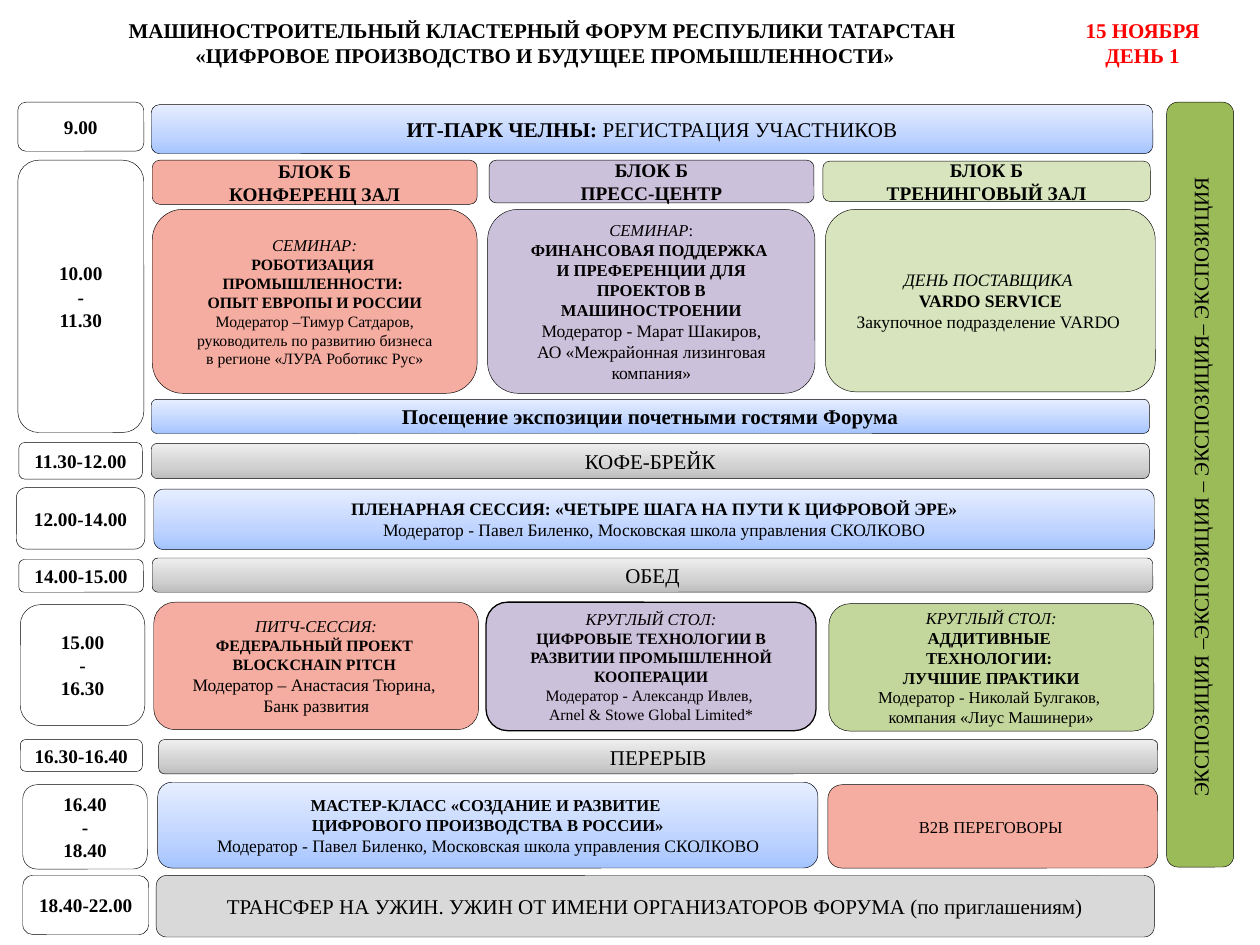
from copy import deepcopy

from pptx import Presentation
from pptx.dml.color import RGBColor
from pptx.enum.shapes import MSO_SHAPE
from pptx.enum.text import MSO_ANCHOR, PP_ALIGN
from pptx.oxml.ns import qn
from pptx.util import Cm, Pt

FONT = "Times New Roman"
BLACK = RGBColor(0x00, 0x00, 0x00)
RED = RGBColor(0xFF, 0x00, 0x00)
WHITE = RGBColor(0xFF, 0xFF, 0xFF)
CORAL = RGBColor(0xF5, 0xAD, 0xA1)
LILAC = RGBColor(0xCC, 0xC1, 0xDA)
LIME = RGBColor(0xD7, 0xE4, 0xBD)
OLIVE = RGBColor(0xC3, 0xD6, 0x9B)
GREEN = RGBColor(0x9B, 0xBB, 0x59)
SILVER = RGBColor(0xD9, 0xD9, 0xD9)
BLUE_FADE = (RGBColor(0xA4, 0xC4, 0xFF), RGBColor(0xBF, 0xD4, 0xFF), RGBColor(0xE6, 0xEE, 0xFF))
GREY_FADE = (RGBColor(0xBD, 0xBD, 0xBD), RGBColor(0xD1, 0xD1, 0xD1), RGBColor(0xEE, 0xEE, 0xEE))
FADE_STOPS = (0, 0.35, 1)


def lines(size, style, *texts):
    return [[(text, size, style)] for text in texts]


HEADINGS = [
    ((0.41, 0.23, 21.16, 1.8), BLACK, lines(
        12, "b", "МАШИНОСТРОИТЕЛЬНЫЙ КЛАСТЕРНЫЙ ФОРУМ РЕСПУБЛИКИ ТАТАРСТАН ",
        "«ЦИФРОВОЕ ПРОИЗВОДСТВО И БУДУЩЕЕ ПРОМЫШЛЕННОСТИ»")),
    ((21.31, 0.23, 3.45, 1.27), RED, lines(12, "b", "15 НОЯБРЯ", "ДЕНЬ 1")),
]

TIMES = [
    ((0.36, 2.06, 2.54, 0.99), ["9.00"]),
    ((0.36, 3.23, 2.54, 5.49), ["10.00", "-", "11.30"]),
    ((0.38, 8.92, 2.49, 0.74), ["11.30-12.00"]),
    ((0.33, 9.83, 2.59, 1.24), ["12.00-14.00"]),
    ((0.38, 11.28, 2.51, 0.66), ["14.00-15.00"]),
    ((0.41, 12.19, 2.51, 2.44), ["15.00", "-", "16.30"]),
    ((0.41, 14.91, 2.46, 0.64), ["16.30-16.40"]),
    ((0.46, 15.82, 2.51, 1.7), ["16.40", "-", "18.40"]),
    ((0.46, 17.65, 2.54, 1.19), ["18.40-22.00"]),
]

EVENTS = [
    ((3.05, 2.11, 20.19, 0.99), BLUE_FADE,
     [[("ИТ-ПАРК ЧЕЛНЫ: ", 12, "b"), ("РЕГИСТРАЦИЯ УЧАСТНИКОВ", 12, "")]]),
    ((3.07, 3.23, 6.55, 0.89), CORAL, lines(11, "b", "БЛОК Б", "КОНФЕРЕНЦ ЗАЛ")),
    ((9.86, 3.23, 6.55, 0.86), LILAC, lines(11, "b", "БЛОК Б", "ПРЕСС-ЦЕНТР")),
    ((16.59, 3.25, 6.6, 0.81), LIME, lines(11, "b", "БЛОК Б", "ТРЕНИНГОВЫЙ ЗАЛ")),
    ((3.07, 4.22, 6.55, 3.71), CORAL,
     lines(9.5, "i", "СЕМИНАР:")
     + lines(9, "b", "РОБОТИЗАЦИЯ ", "ПРОМЫШЛЕННОСТИ: ", "ОПЫТ ЕВРОПЫ И РОССИИ")
     + lines(9, "", "Модератор –Тимур Сатдаров,", "руководитель по развитию бизнеса",
             "в регионе «ЛУРА Роботикс Рус»")),
    ((9.83, 4.22, 6.6, 3.71), LILAC,
     [[("СЕМИНАР", 9.5, "i"), (":", 9.5, "")]]
     + lines(9.5, "b", "ФИНАНСОВАЯ ПОДДЕРЖКА ",
             "И ПРЕФЕРЕНЦИИ ДЛЯ ПРОЕКТОВ В МАШИНОСТРОЕНИИ")
     + lines(10, "", "Модератор - Марат Шакиров,", "АО «Межрайонная лизинговая компания»")),
    ((16.64, 4.22, 6.65, 3.68), LIME,
     lines(10, "i", "ДЕНЬ ПОСТАВЩИКА ")
     + lines(10, "b", "VARDO SERVICE")
     + lines(10, "", "Закупочное подразделение VARDO ")),
    ((3.05, 8.05, 20.12, 0.69), BLUE_FADE,
     lines(12, "b", "Посещение экспозиции почетными гостями Форума")),
    ((3.05, 8.94, 20.12, 0.71), GREY_FADE, lines(12, "", "КОФЕ-БРЕЙК")),
    ((3.1, 9.86, 20.17, 1.22), BLUE_FADE,
     lines(10, "b", "ПЛЕНАРНАЯ СЕССИЯ: «ЧЕТЫРЕ ШАГА НА ПУТИ К ЦИФРОВОЙ ЭРЕ»")
     + lines(10, "", "Модератор - Павел Биленко, Московская школа управления СКОЛКОВО")),
    ((3.07, 11.25, 20.17, 0.69), GREY_FADE, lines(12, "", "ОБЕД")),
    ((3.1, 12.14, 6.55, 2.57), CORAL,
     lines(9.5, "i", "ПИТЧ-СЕССИЯ:")
     + lines(9, "b", "ФЕДЕРАЛЬНЫЙ ПРОЕКТ ", "BLOCKCHAIN PITCH ")
     + lines(10, "", "Модератор – Анастасия Тюрина, ", "Банк развития")),
    ((9.8, 12.14, 6.65, 2.59), LILAC,
     lines(9.5, "i", "КРУГЛЫЙ СТОЛ:")
     + lines(9, "b", "ЦИФРОВЫЕ ТЕХНОЛОГИИ В РАЗВИТИИ ПРОМЫШЛЕННОЙ КООПЕРАЦИИ")
     + lines(9, "", "Модератор - Александр Ивлев, ", "Arnel & Stowe Global Limited*")),
    ((16.71, 12.17, 6.55, 2.57), OLIVE,
     lines(9.5, "i", "КРУГЛЫЙ СТОЛ:")
     + lines(9.5, "b", "АДДИТИВНЫЕ ", "ТЕХНОЛОГИИ: ", "ЛУЧШИЕ ПРАКТИКИ")
     + lines(9.5, "", "Модератор - Николай Булгаков, ", "компания «Лиус Машинери»")),
    ((3.2, 14.91, 20.14, 0.69), GREY_FADE, lines(12, "", "ПЕРЕРЫВ")),
    ((3.18, 15.77, 13.31, 1.73), BLUE_FADE,
     lines(9.5, "b", "МАСТЕР-КЛАСС «СОЗДАНИЕ И РАЗВИТИЕ ", "ЦИФРОВОГО ПРОИЗВОДСТВА В РОССИИ»")
     + lines(10, "", "Модератор - Павел Биленко, Московская школа управления СКОЛКОВО")),
    ((16.69, 15.82, 6.65, 1.68), CORAL, lines(9.5, "", "B2В ПЕРЕГОВОРЫ ")),
    ((3.15, 17.65, 20.12, 1.24), SILVER, lines(
        12, "", "ТРАНСФЕР НА УЖИН. УЖИН ОТ ИМЕНИ ОРГАНИЗАТОРОВ ФОРУМА (по приглашениям)")),
]

EXPOSITION = ((23.52, 2.06, 1.35, 15.42), GREEN, lines(
    12, "", "ЭКСПОЗИЦИЯ –ЭКСПОЗИЦИЯ – ЭКСПОЗИЦИЯ– ЭКСПОЗИЦИЯ "))


def write(box, content, color):
    frame = box.text_frame
    frame.word_wrap = True
    for index, line in enumerate(content):
        para = frame.add_paragraph() if index else frame.paragraphs[0]
        para.alignment = PP_ALIGN.CENTER
        for text, size, style in line:
            span = para.add_run()
            span.text = text
            span.font.name = FONT
            span.font.size = Pt(size)
            span.font.bold = style == "b"
            span.font.italic = style == "i"
            span.font.color.rgb = color


def fade(box, colors):
    box.fill.gradient()
    box.fill.gradient_angle = 90
    stop_list = box._element.spPr.find(qn("a:gradFill")).find(qn("a:gsLst"))
    stop_list.insert(1, deepcopy(stop_list[0]))
    for stop, color, position in zip(box.fill.gradient_stops, colors, FADE_STOPS):
        stop.color.rgb = color
        stop.position = position


def add_card(slide, place, fill, content, line_width=0.25):
    box = slide.shapes.add_shape(MSO_SHAPE.ROUNDED_RECTANGLE, *map(Cm, place))
    box.shadow.inherit = False
    if fill in (BLUE_FADE, GREY_FADE):
        fade(box, fill)
    else:
        box.fill.solid()
        box.fill.fore_color.rgb = fill
    box.line.color.rgb = BLACK
    box.line.width = Pt(line_width)
    box.text_frame.vertical_anchor = MSO_ANCHOR.MIDDLE
    write(box, content, BLACK)
    return box


def main():
    deck = Presentation()
    deck.slide_width, deck.slide_height = Cm(25.4), Cm(19.05)
    slide = deck.slides.add_slide(deck.slide_layouts[6])
    for place, color, content in HEADINGS:
        write(slide.shapes.add_textbox(*map(Cm, place)), content, color)
    for place, texts in TIMES:
        add_card(slide, place, WHITE, lines(11, "b", *texts))
    for place, fill, content in EVENTS:
        is_digital_table = fill == LILAC and place[1] > 12
        add_card(slide, place, fill, content, 0.75 if is_digital_table else 0.25)
    banner = add_card(slide, *EXPOSITION)
    banner.text_frame._txBody.bodyPr.set("vert", "vert270")
    deck.save("out.pptx")


if __name__ == "__main__":
    main()
